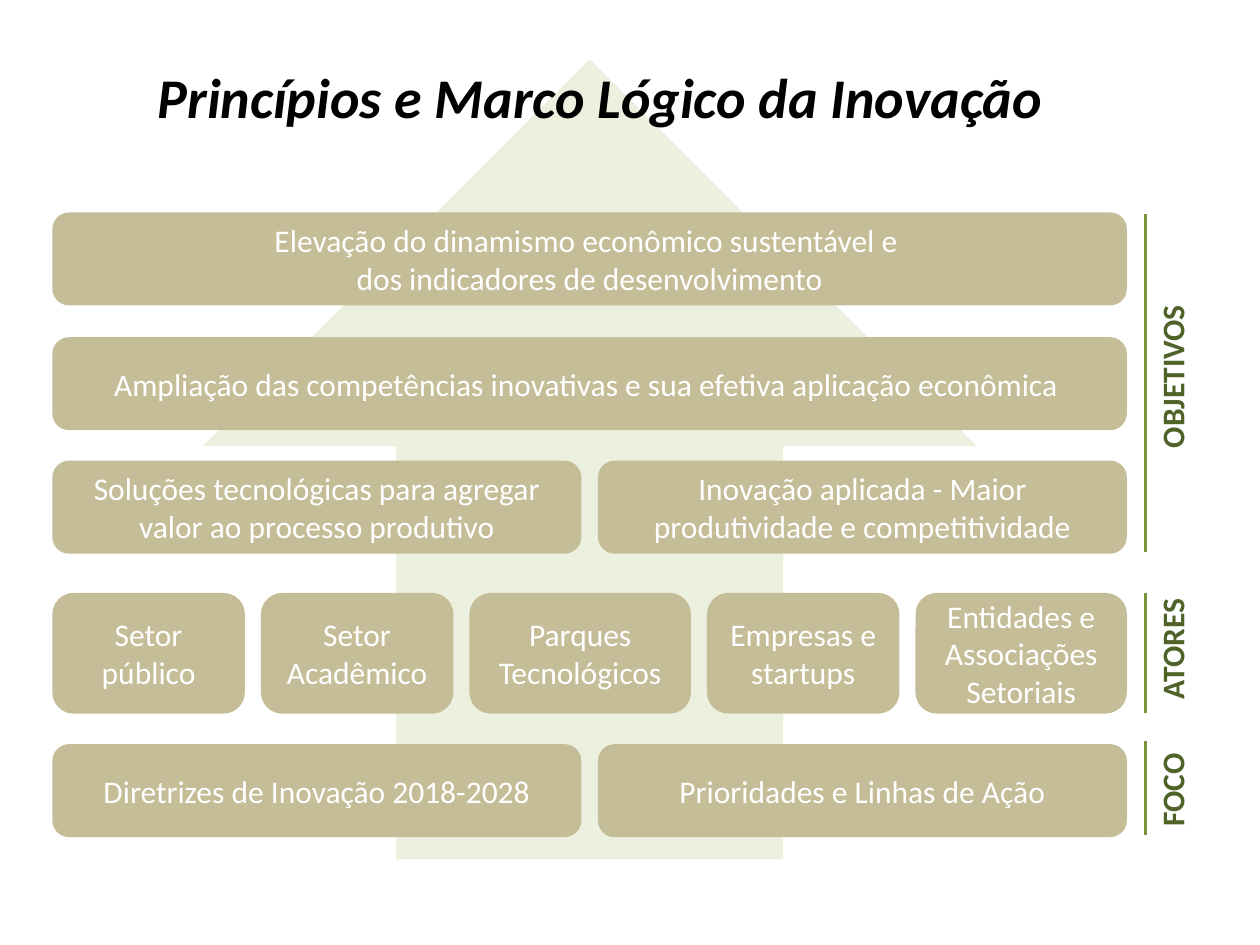
import pptx
import pptx.util
import pptx.dml.color
import pptx.enum.shapes
import pptx.enum.text
import lxml.etree
from pptx.util import Inches

COLORS = {"arrow": "EBF1DE", "box": "C4BD97", "box_text": "FFFFFF",
          "title": "000000", "label": "4F6228", "bracket": "77933C"}
SHAPES = pptx.enum.shapes.MSO_SHAPE
ALIGN = pptx.enum.text.PP_ALIGN
ANCHOR = pptx.enum.text.MSO_ANCHOR


def color(name):
    return pptx.dml.color.RGBColor.from_string(COLORS[name])


def write(shape, text, color_name, wrap=True, size=18, **font_format):
    """Fill a shape with centred text, one paragraph per line of text."""
    frame = shape.text_frame
    frame.text = text
    frame.word_wrap = wrap
    frame.auto_size = pptx.enum.text.MSO_AUTO_SIZE.NONE
    frame.vertical_anchor = ANCHOR.MIDDLE
    font_values = {"name": "Calibri", "size": pptx.util.Pt(size), **font_format}
    for paragraph in frame.paragraphs:
        paragraph.alignment = ALIGN.CENTER
        for run in paragraph.runs:
            for attribute, value in font_values.items():
                setattr(run.font, attribute, value)
            run.font.color.rgb = color(color_name)


presentation = pptx.Presentation()
presentation.slide_width, presentation.slide_height = Inches(10), Inches(7.5)
slide = presentation.slides.add_slide(presentation.slide_layouts[5])

# Title in front of the background arrow
title = slide.shapes.title
title.left, title.top = Inches(1.07), Inches(0.44)
title.width, title.height = Inches(7.39), Inches(0.64)
write(title, "Princípios e Marco Lógico da Inovação", "title",
      wrap=False, size=32, bold=True, italic=True)

arrow = slide.shapes.add_shape(
    SHAPES.UP_ARROW, Inches(1.61), Inches(0.47), Inches(6.14), Inches(6.35))
arrow.shadow.inherit = False
arrow.fill.solid()
arrow.fill.fore_color.rgb = color("arrow")
arrow.line.fill.background()
title.element.addprevious(arrow.element)

# Rows of boxes: top, height, [(width, text), ...]
LEFT, ROW_WIDTH = 0.43, 8.5
rows = [
    (1.7, 0.71, [(8.5, "Elevação do dinamismo econômico sustentável e \n"
                       "dos indicadores de desenvolvimento")]),
    (2.69, 0.71, [(8.5, "Ampliação das competências inovativas e sua "
                        "efetiva aplicação econômica ")]),
    (3.67, 0.71, [(4.17, "Soluções tecnológicas para agregar valor ao processo produtivo"),
                  (4.17, "Inovação aplicada - Maior produtividade e competitividade")]),
    (4.72, 0.93, [(1.5, "Setor público"), (1.5, "Setor Acadêmico"),
                  (1.73, "Parques Tecnológicos"), (1.5, "Empresas e startups"),
                  (1.65, "Entidades e Associações Setoriais")]),
    (5.92, 0.71, [(4.17, "Diretrizes de Inovação 2018-2028"),
                  (4.17, "Prioridades e Linhas de Ação")]),
]
for top, height, boxes in rows:
    gap = (ROW_WIDTH - sum(width for width, _ in boxes)) / max(len(boxes) - 1, 1)
    left = LEFT
    for width, text in boxes:
        box = slide.shapes.add_shape(
            SHAPES.ROUNDED_RECTANGLE, Inches(left), Inches(top), Inches(width), Inches(height))
        box.shadow.inherit = False
        box.fill.solid()
        box.fill.fore_color.rgb = color("box")
        box.line.color.rgb = color("box")
        box.line.width = pptx.util.Pt(2)
        write(box, text, "box_text")
        left += width + gap

# Side lines with rotated labels: text, line top, line bottom, label centre, label width
LINE_X, LABEL_X, LABEL_HEIGHT = 9.09, 9.3, 0.4
sections = [
    ("OBJETIVOS", 1.7, 4.38, 2.99, 1.35),
    ("ATORES", 4.71, 5.66, 5.15, 1),
    ("FOCO", 5.88, 6.63, 6.27, 0.78),
]
for text, top, bottom, center, width in sections:
    line = slide.shapes.add_connector(
        pptx.enum.shapes.MSO_CONNECTOR.STRAIGHT,
        Inches(LINE_X), Inches(top), Inches(LINE_X), Inches(bottom))
    line.line.color.rgb = color("bracket")
    line.line.width = pptx.util.Pt(1.5)
    lxml.etree.SubElement(line.element.spPr, pptx.oxml.ns.qn("a:effectLst"))

    label = slide.shapes.add_textbox(
        Inches(LABEL_X - width / 2), Inches(center - LABEL_HEIGHT / 2),
        Inches(width), Inches(LABEL_HEIGHT))
    label.rotation = 270
    write(label, text, "label", wrap=False, bold=True)

presentation.save("out.pptx")
